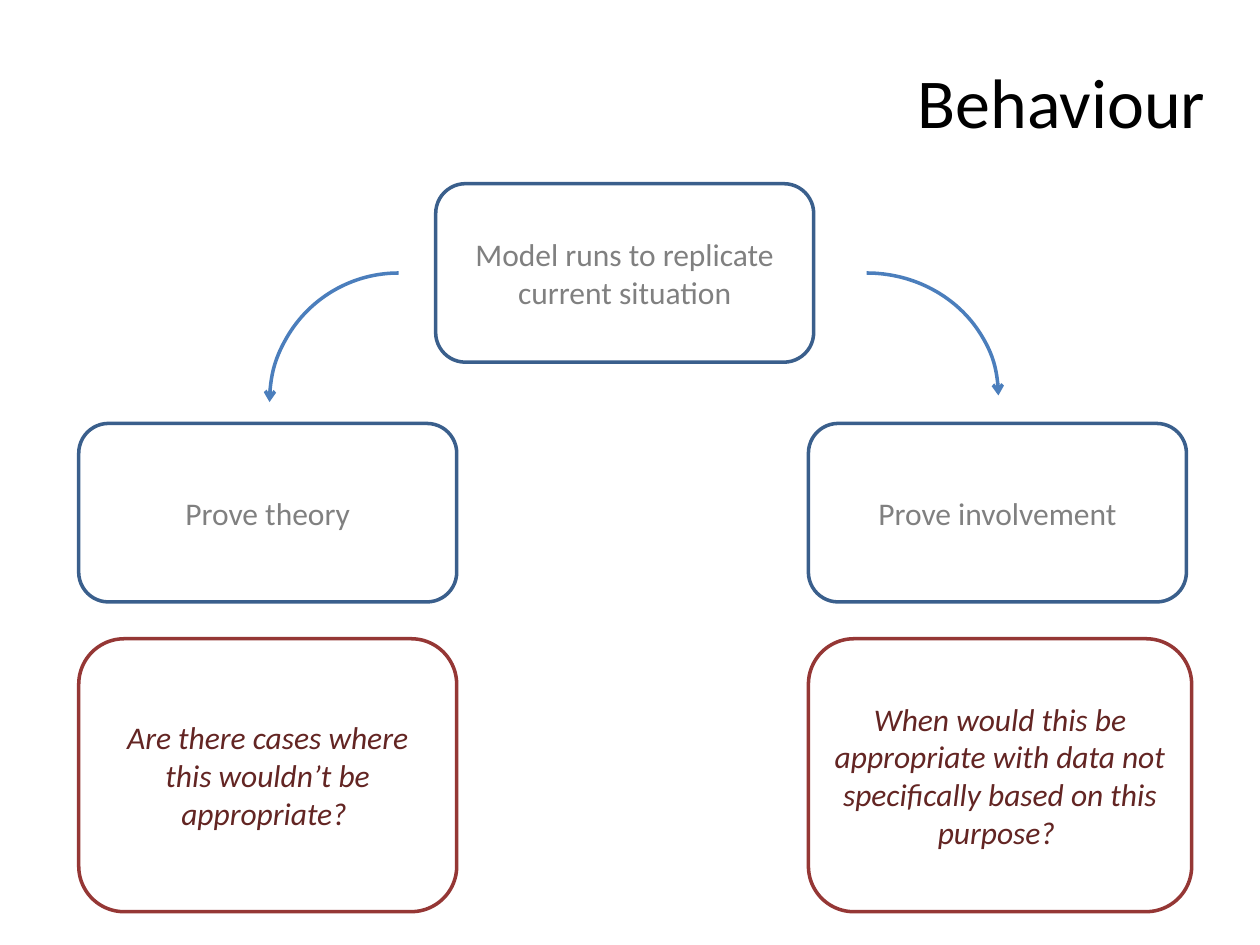
from pptx import Presentation
from pptx.dml.color import RGBColor
from pptx.enum.shapes import MSO_SHAPE
from pptx.enum.text import MSO_ANCHOR, PP_ALIGN
from pptx.oxml.ns import qn
from pptx.util import Pt
from lxml import etree

ROUNDED, ARC = MSO_SHAPE.ROUNDED_RECTANGLE, MSO_SHAPE.ARC
MIDDLE = MSO_ANCHOR.MIDDLE
CENTER, RIGHT = PP_ALIGN.CENTER, PP_ALIGN.RIGHT
TITLE_ONLY = 5

THEME = {
    "font": "Calibri",
    "line_width": 2,
    "arrow": "4B7EBC",
    "title": {"size": 40, "color": "000000", "italic": False},
    "step": {"size": 18, "color": "808080", "italic": False, "line": "3A5F8C"},
    "question": {"size": 18, "color": "632523", "italic": True, "line": "953735"},
}

TITLE = "Behaviour"
TITLE_FRAME = (48, 12.5, 648, 90)

LEFT, MIDDLE_COLUMN, RIGHT_COLUMN = 45, 249, 462
BOX_WIDTH, WIDE_BOX_WIDTH = 216, 219
ROWS = {"start": (105, 102), "proof": (242, 102), "question": (365, 156)}

# text, style, row, left, width
BOXES = [
    ("Model runs to replicate current situation", "step", "start", MIDDLE_COLUMN, BOX_WIDTH),
    ("Prove theory", "step", "proof", LEFT, BOX_WIDTH),
    ("Prove involvement", "step", "proof", RIGHT_COLUMN, BOX_WIDTH),
    ("When would this be appropriate with data not specifically based on this purpose? ",
     "question", "question", RIGHT_COLUMN, WIDE_BOX_WIDTH),
    ("Are there cases where this wouldn’t be appropriate? ",
     "question", "question", LEFT, BOX_WIDTH),
]

# frame, mirrored
ARROWS = [
    ((420, 156, 150.5, 140), False),
    ((154, 156, 147.5, 147.5), True),
]


def write_text(shape, text, style, alignment):
    frame = shape.text_frame
    frame.word_wrap = True
    frame.vertical_anchor = MIDDLE
    paragraph = frame.paragraphs[0]
    paragraph.alignment = alignment
    run = paragraph.add_run()
    run.text = text
    font_values = {"name": THEME["font"], "size": Pt(style["size"]), "italic": style["italic"]}
    for name, value in font_values.items():
        setattr(run.font, name, value)
    run.font.color.rgb = RGBColor.from_string(style["color"])


def add_outline(slide, preset, frame, color):
    """Add an unfilled shape with a coloured line and no shadow."""
    shape = slide.shapes.add_shape(preset, *map(Pt, frame))
    shape.shadow.inherit = False
    shape.fill.background()
    shape.line.color.rgb = RGBColor.from_string(color)
    shape.line.width = Pt(THEME["line_width"])
    return shape


def add_curved_arrow(slide, frame, mirrored):
    arrow = add_outline(slide, ARC, frame, THEME["arrow"])
    properties = arrow._element.spPr
    if mirrored:
        properties.find(qn("a:xfrm")).set("flipH", "1")
    etree.SubElement(properties.find(qn("a:ln")), qn("a:tailEnd"), type="arrow")


def main():
    presentation = Presentation()
    presentation.slide_width, presentation.slide_height = Pt(720), Pt(540)
    slide = presentation.slides.add_slide(presentation.slide_layouts[TITLE_ONLY])

    title = slide.shapes.title
    for name, value in zip(("left", "top", "width", "height"), TITLE_FRAME):
        setattr(title, name, Pt(value))
    write_text(title, TITLE, THEME["title"], RIGHT)

    for text, style_name, row, left, width in BOXES:
        style = THEME[style_name]
        top, height = ROWS[row]
        box = add_outline(slide, ROUNDED, (left, top, width, height), style["line"])
        write_text(box, text, style, CENTER)

    for frame, mirrored in ARROWS:
        add_curved_arrow(slide, frame, mirrored)

    presentation.save("out.pptx")


if __name__ == "__main__":
    main()
